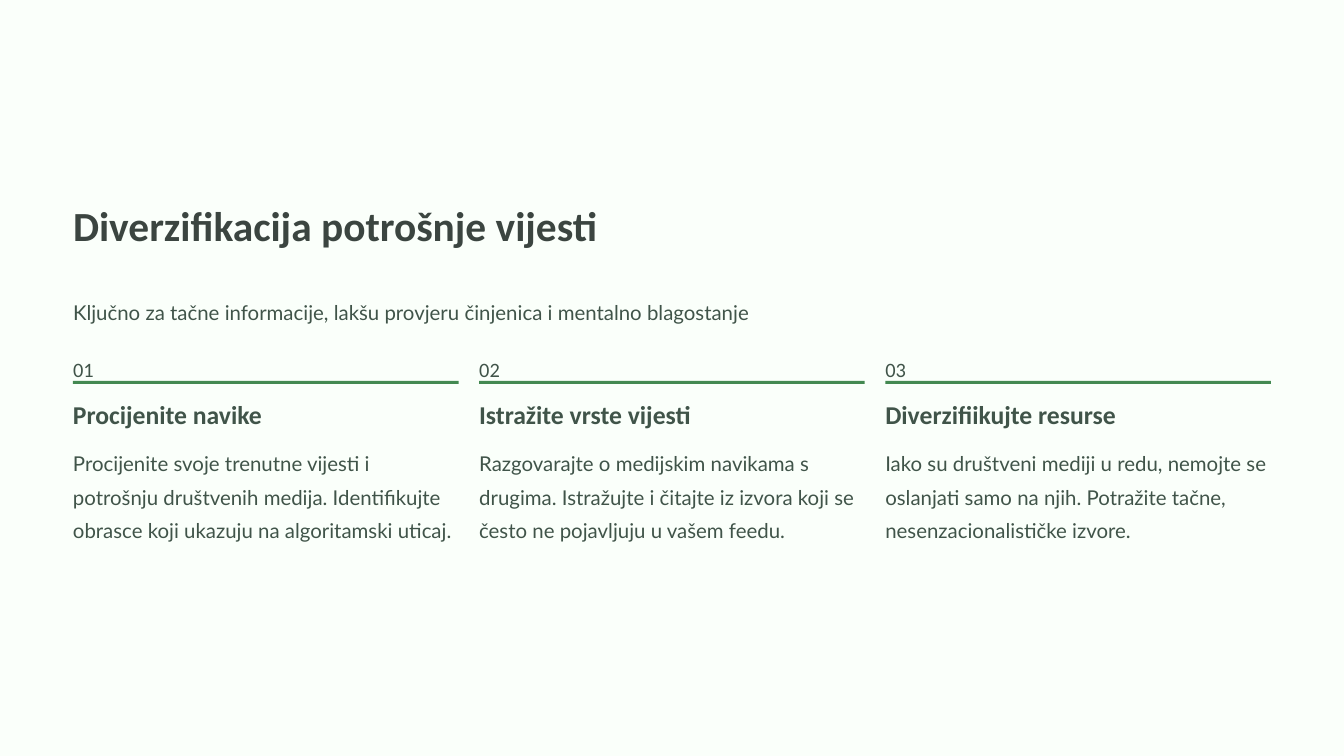
from pptx import Presentation
from pptx import util as u
from pptx.dml import color
from pptx.enum import shapes, text

TITLE = "Diverzifikacija potrošnje vijesti"
SUBTITLE = "Ključno za tačne informacije, lakšu provjeru činjenica i mentalno blagostanje"
STEPS = [
    ("Procijenite navike",
     "Procijenite svoje trenutne vijesti i potrošnju društvenih medija. "
     "Identifikujte obrasce koji ukazuju na algoritamski uticaj."),
    ("Istražite vrste vijesti",
     "Razgovarajte o medijskim navikama s drugima. Istražujte i čitajte "
     "iz izvora koji se često ne pojavljuju u vašem feedu."),
    ("Diverzifiikujte resurse",
     "Iako su društveni mediji u redu, nemojte se oslanjati samo na njih. "
     "Potražite tačne, nesenzacionalističke izvore."),
]

PAPER, DARK, BODY, GREEN = "FAFFFA", "3B4540", "405449", "438951"
WIDTH, HEIGHT = 1152, 648
MARGIN, GAP = 62.6, 17.6
CONTENT = WIDTH - 2 * MARGIN
COLUMN = (CONTENT - GAP * (len(STEPS) - 1)) / len(STEPS)


def paint(fill, value):
    fill.solid()
    fill.fore_color.rgb = color.RGBColor.from_string(value)


def place(shape, left, top, width, height):
    shape.left, shape.top = u.Pt(left), u.Pt(top)
    shape.width, shape.height = u.Pt(width), u.Pt(height)


def write(box, words, size, spacing, font="Calibri", ink=BODY, bold=False, wrap=True):
    frame = box.text_frame
    frame.margin_left = frame.margin_top = frame.margin_right = frame.margin_bottom = 0
    frame.word_wrap = wrap
    frame.auto_size = text.MSO_AUTO_SIZE.NONE
    frame.vertical_anchor = text.MSO_ANCHOR.TOP
    para = frame.paragraphs[0]
    para.text = words
    para.alignment = text.PP_ALIGN.LEFT
    para.line_spacing = u.Pt(spacing)
    para.space_before = u.Pt(0)
    para.font.name, para.font.size, para.font.bold = font, u.Pt(size), bold
    para.font.color.rgb = color.RGBColor.from_string(ink)


def add_text(slide, area, words, size, spacing, **style):
    box = slide.shapes.add_textbox(*map(u.Pt, area))
    write(box, words, size, spacing, **style)


def add_step(slide, index, heading, body):
    left = MARGIN + index * (COLUMN + GAP)
    add_text(slide, (left, 298.8, 18, 22.3), f"{index + 1:02}", 17.5, 28.5, wrap=False)
    rule = slide.shapes.add_shape(shapes.MSO_SHAPE.RECTANGLE,
                                  *map(u.Pt, (left, 326.5, COLUMN, 2.5)))
    rule.shadow.inherit = False
    paint(rule.fill, GREEN)
    rule.line.fill.background()
    add_text(slide, (left, 340.6, COLUMN, 28), heading, 22, 27.5, bold=True, wrap=False)
    add_text(slide, (left, 379.4, COLUMN, 85.7), body, 17.5, 28.5, font="Lato")


def main():
    deck = Presentation()
    deck.slide_width, deck.slide_height = u.Pt(WIDTH), u.Pt(HEIGHT)
    slide = deck.slides.add_slide(deck.slide_layouts[5])
    paint(slide.background.fill, PAPER)

    title = slide.shapes.title
    place(title, MARGIN, 170, 583, 44.6)
    write(title, TITLE, 35.5, 44.5, ink=DARK, bold=True, wrap=False)
    add_text(slide, (MARGIN, 249.8, CONTENT, 28.8), SUBTITLE, 17.5, 28.5,
             font="Lato", wrap=False)
    for index, (heading, body) in enumerate(STEPS):
        add_step(slide, index, heading, body)
    deck.save("out.pptx")


if __name__ == "__main__":
    main()
